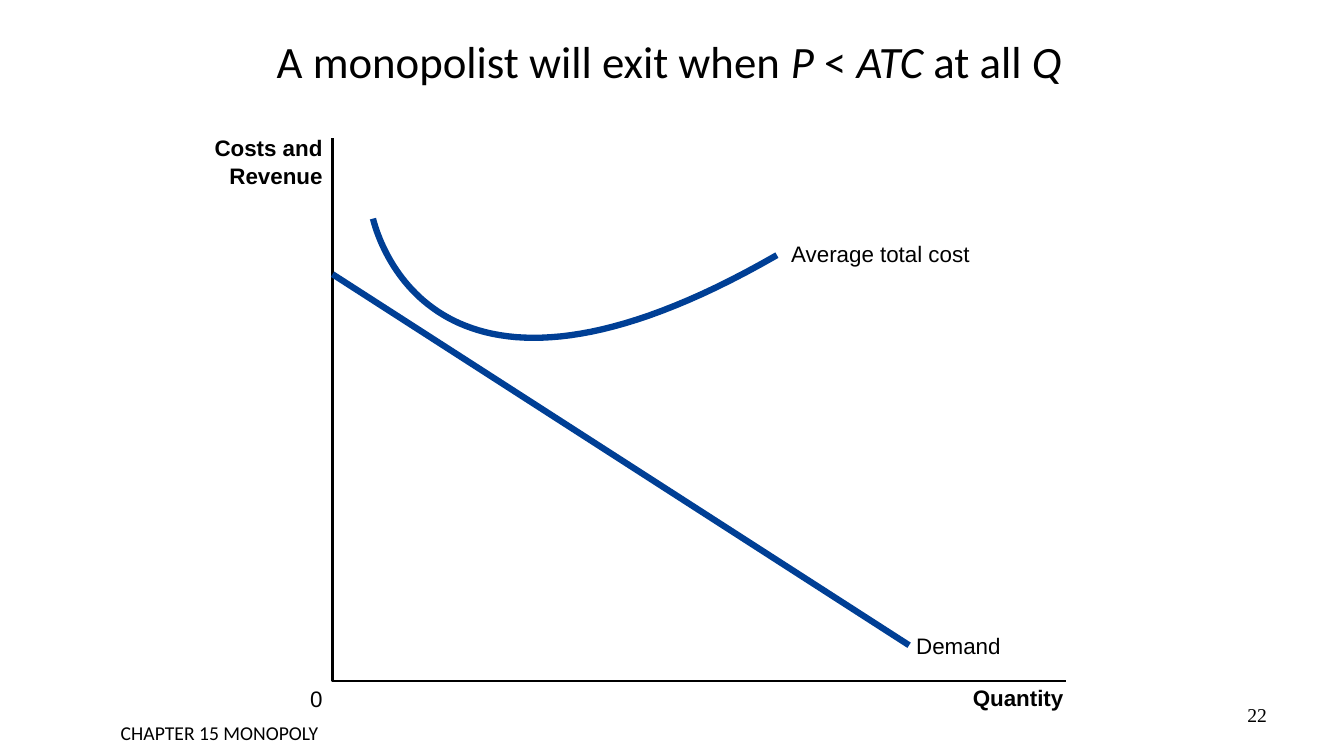
from pptx import Presentation
from pptx.dml.color import RGBColor
from pptx.enum.shapes import MSO_CONNECTOR
from pptx.enum.text import MSO_ANCHOR, MSO_AUTO_SIZE, PP_ALIGN
from pptx.oxml.ns import qn
from pptx.util import Cm, Pt
from lxml import etree

LEFT, CENTER, RIGHT = PP_ALIGN.LEFT, PP_ALIGN.CENTER, PP_ALIGN.RIGHT
MIDDLE = MSO_ANCHOR.MIDDLE
NO_FIT = MSO_AUTO_SIZE.NONE
STRAIGHT = MSO_CONNECTOR.STRAIGHT

COLORS = {"ink": "000000", "curve": "003F95"}
TITLE_ONLY = 5
LABEL_HEIGHT = 0.69
CURVE_STEPS = 60


def write_text(shape, runs, font="Arial", size=16, bold=False, align=LEFT):
    """Write (text, italic) runs into the first paragraph of the shape."""
    paragraph = shape.text_frame.paragraphs[0]
    paragraph.alignment = align
    for text, italic in runs:
        run = paragraph.add_run()
        run.text = text
        run.font.name = font
        run.font.size = Pt(size)
        run.font.bold = bold
        run.font.italic = italic
        run.font.color.rgb = RGBColor.from_string(COLORS["ink"])
    return paragraph


def add_text(slide, box, text, **text_format):
    shape = slide.shapes.add_textbox(*map(Cm, box))
    shape.text_frame.word_wrap = True
    write_text(shape, [(text, False)], **text_format)
    return shape


def add_label(slide, anchor_x, top, width, text, align=LEFT, bold=False):
    """Add a one-line label without margins, starting or ending at anchor_x."""
    left = anchor_x - width if align == RIGHT else anchor_x
    shape = add_text(slide, (left, top, width, LABEL_HEIGHT), text,
                     align=align, bold=bold)
    frame = shape.text_frame
    frame.margin_left = frame.margin_right = 0
    frame.margin_top = frame.margin_bottom = 0
    frame.auto_size = NO_FIT


def format_line(shape, color, width):
    shape.line.color.rgb = RGBColor.from_string(COLORS[color])
    shape.line.width = Pt(width)


def add_path(slide, points, color, width):
    (start_x, start_y), *others = [(Cm(x), Cm(y)) for x, y in points]
    builder = slide.shapes.build_freeform(start_x, start_y)
    builder.add_line_segments(others, close=False)
    shape = builder.convert_to_shape()
    shape.shadow.inherit = False
    shape.fill.background()
    format_line(shape, color, width)


def add_straight_line(slide, start, end, color, width):
    connector = slide.shapes.add_connector(STRAIGHT, *map(Cm, start + end))
    format_line(connector, color, width)
    etree.SubElement(connector._element.spPr, qn("a:effectLst"))


def bezier_points(controls):
    """Sample a cubic Bezier curve given by its four control points."""
    points = []
    for step in range(CURVE_STEPS + 1):
        t = step / CURVE_STEPS
        weights = ((1 - t) ** 3, 3 * t * (1 - t) ** 2, 3 * t**2 * (1 - t), t**3)
        points.append(tuple(
            sum(weight * point[axis] for weight, point in zip(weights, controls))
            for axis in (0, 1)
        ))
    return points


def build_title(slide, box):
    title = slide.shapes.title
    title.left, title.top, title.width, title.height = map(Cm, box)
    title.text_frame.vertical_anchor = MIDDLE
    title.text_frame.word_wrap = True
    title.text_frame.auto_size = NO_FIT
    runs = [("A monopolist will exit when ", False), ("P", True), (" < ", False),
            ("ATC", True), (" at all ", False), ("Q", True)]
    paragraph = write_text(title, runs, font="Calibri", size=32, align=CENTER)
    paragraph.line_spacing = 0.8


def build_cost_diagram(slide, box):
    left, top, width, height = box

    def place(x, y):
        return left + x, top + y

    add_path(slide, [place(0, 0), place(0, height), place(width, height)], "ink", 1.5)
    add_straight_line(slide, place(0, 3.43), place(14.53, 12.78), "curve", 4.5)
    cost_controls = [place(1.02, 2.03), place(1.32, 3.2),
                     place(3.15, 7.59), place(11.2, 2.95)]
    add_path(slide, bezier_points(cost_controls), "curve", 4.5)

    labels = [
        (18.42, height + 0.08, 2.6, "Quantity", RIGHT, True),
        (-0.25, height + 0.1, 0.6, "0", RIGHT, False),
        (-0.25, -0.1, 3, "Costs and", RIGHT, True),
        (-0.25, 0.61, 3, "Revenue", RIGHT, True),
        (14.71, 12.45, 2.5, "Demand", LEFT, False),
        (11.56, 2.57, 5, "Average total cost", LEFT, False),
    ]
    for x, y, label_width, text, align, bold in labels:
        add_label(slide, *place(x, y), label_width, text, align=align, bold=bold)


def build_footer(slide, box):
    left, top, width, height = box
    add_text(slide, (left + width - 2.06, top, 2.06, 1.32), "22",
             font="Times New Roman", size=14, align=RIGHT)
    add_text(slide, (left, top + height - 0.84, 9.45, 0.84), "CHAPTER 15 MONOPOLY",
             font="Calibri", size=14, align=CENTER)


def main():
    presentation = Presentation()
    presentation.slide_width = Cm(33.87)
    presentation.slide_height = Cm(19.05)
    slide = presentation.slides.add_slide(presentation.slide_layouts[TITLE_ONLY])
    build_title(slide, (4.95, 0.71, 23.83, 1.9))
    build_cost_diagram(slide, (8.38, 3.48, 18.49, 13.69))
    build_footer(slide, (0.81, 17.58, 31.37, 1.29))
    presentation.save("out.pptx")


if __name__ == "__main__":
    main()
